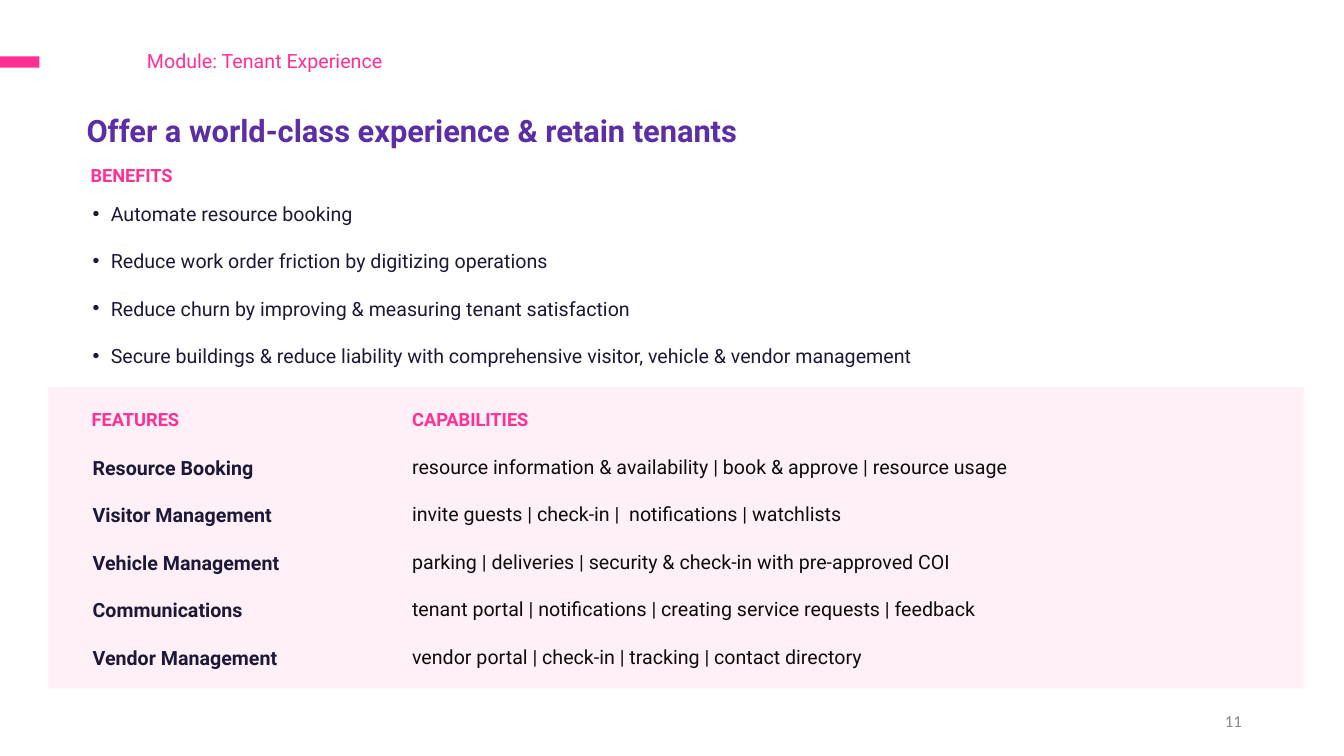
import pptx
import pptx.dml.color
import pptx.enum.shapes
import pptx.enum.text
import pptx.oxml.ns
import pptx.util
from lxml import etree

PINK, PURPLE, NAVY = "FF3093", "5C2EA5", "1B1939"
BLACK, GREY, BLUSH = "0D0D0D", "888888", "FFEFF6"

deck = pptx.Presentation()
deck.slide_width = pptx.util.Inches(13.33)
deck.slide_height = pptx.util.Inches(7.5)
page = deck.slides.add_slide(deck.slide_layouts[6])

# The grid has 100 columns and 100 rows
COLUMN = deck.slide_width / 100
ROW = deck.slide_height / 100


def paint(target, colour):
    """Give a fill or a font a solid colour from a hex string."""
    if hasattr(target, "solid"):
        target.solid()
        target = target.fore_color
    else:
        target = target.color
    target.rgb = pptx.dml.color.RGBColor.from_string(colour)


def add_text(area, lines, size, colour, bold=False, font="Roboto",
             indent=0, hanging=0):
    """Place lines in an area of (column, row, columns, rows); hanging adds bullets."""
    left, top, width, height = area
    box = page.shapes.add_textbox(int(left * COLUMN), int(top * ROW),
                                  int(width * COLUMN), int(height * ROW))
    box.text_frame.word_wrap = True
    for index, line in enumerate(lines):
        para = box.text_frame.paragraphs[0] if index == 0 else box.text_frame.add_paragraph()
        properties = para._p.get_or_add_pPr()
        properties.set("marL", str(pptx.util.Inches(indent)))
        properties.set("indent", str(-pptx.util.Inches(hanging)))
        if hanging:
            bullet_colour = etree.SubElement(properties, pptx.oxml.ns.qn("a:buClr"))
            etree.SubElement(bullet_colour, pptx.oxml.ns.qn("a:srgbClr"), val=colour)
            etree.SubElement(properties, pptx.oxml.ns.qn("a:buFont"), typeface="Arial")
            etree.SubElement(properties, pptx.oxml.ns.qn("a:buChar"), char="•")
        if index:
            para.space_before = pptx.util.Pt(17.1)
        span = para.add_run()
        span.text = line
        span.font.name = font
        span.font.size = pptx.util.Pt(size)
        span.font.bold = bold
        paint(span.font, colour)
    return box


# Panel behind the features, and the accent bar at the left edge
for left, top, width, height, colour in [
    (3.6, 51.2, 93.4, 39.87, BLUSH),
    (0, 7.47, 2.93, 1.47, PINK),
]:
    block = page.shapes.add_shape(
        pptx.enum.shapes.MSO_SHAPE.RECTANGLE,
        int(left * COLUMN), int(top * ROW), int(width * COLUMN), int(height * ROW))
    block.shadow.inherit = False
    paint(block.fill, colour)
    block.line.fill.background()

# Header
add_text((10.2, 5.87, 29.4, 4.53), ["Module: Tenant Experience"], 14, PINK)
add_text((5.7, 14.13, 58.95, 6.27),
         ["Offer a world-class experience & retain tenants"], 22, PURPLE, bold=True)

# Section headings
for left, top, heading in [
    (6, 21.07, "BENEFITS"),
    (6.08, 53.33, "FEATURES"),
    (29.93, 53.33, "CAPABILITIES"),
]:
    add_text((left, top, 12.75, 4.27), [heading], 13, PINK, bold=True)

benefits = [
    "Automate resource booking",
    "Reduce work order friction by digitizing operations",
    "Reduce churn by improving & measuring tenant satisfaction",
    "Secure buildings & reduce liability with comprehensive visitor, vehicle & vendor management",
]
add_text((5.18, 26, 80.93, 23.33), benefits, 14, NAVY, indent=0.31, hanging=0.18)

capabilities = {
    "Resource Booking": "resource information & availability | book & approve | resource usage",
    "Visitor Management": "invite guests | check-in |  notifications | watchlists",
    "Vehicle Management": "parking | deliveries | security & check-in with pre-approved COI",
    "Communications": "tenant portal | notifications | creating service requests | feedback",
    "Vendor Management": "vendor portal | check-in | tracking | contact directory",
}
add_text((5.18, 59.6, 19.73, 29.6), capabilities.keys(), 14, NAVY, bold=True, indent=0.13)
add_text((28.95, 59.47, 48.3, 29.6), capabilities.values(), 14, BLACK, indent=0.13)

page_number = add_text((70.65, 92.67, 22.5, 5.33), ["11"], 12, GREY, font="Calibri")
page_number.text_frame.vertical_anchor = pptx.enum.text.MSO_ANCHOR.MIDDLE
page_number.text_frame.paragraphs[0].alignment = pptx.enum.text.PP_ALIGN.RIGHT

deck.save("out.pptx")
